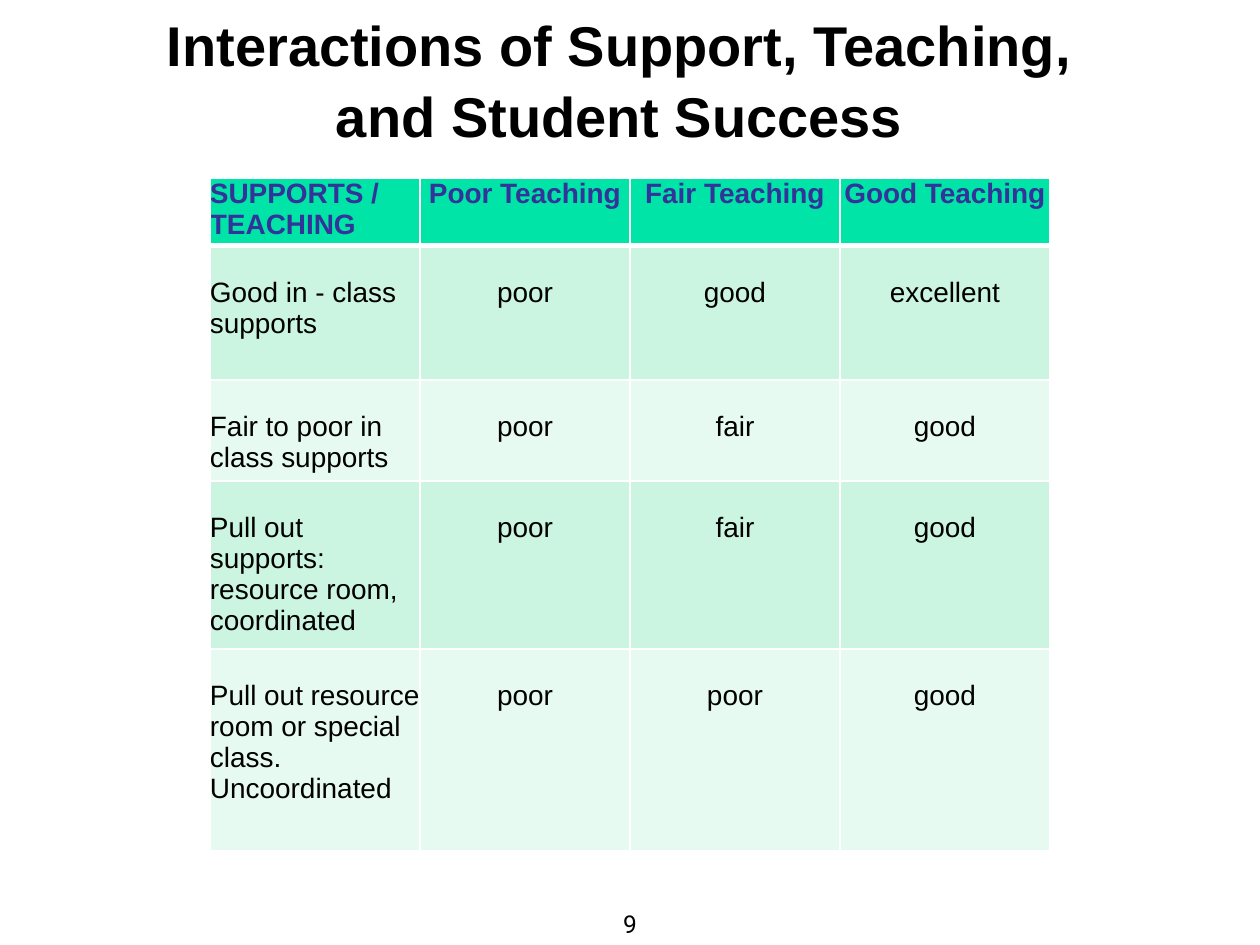
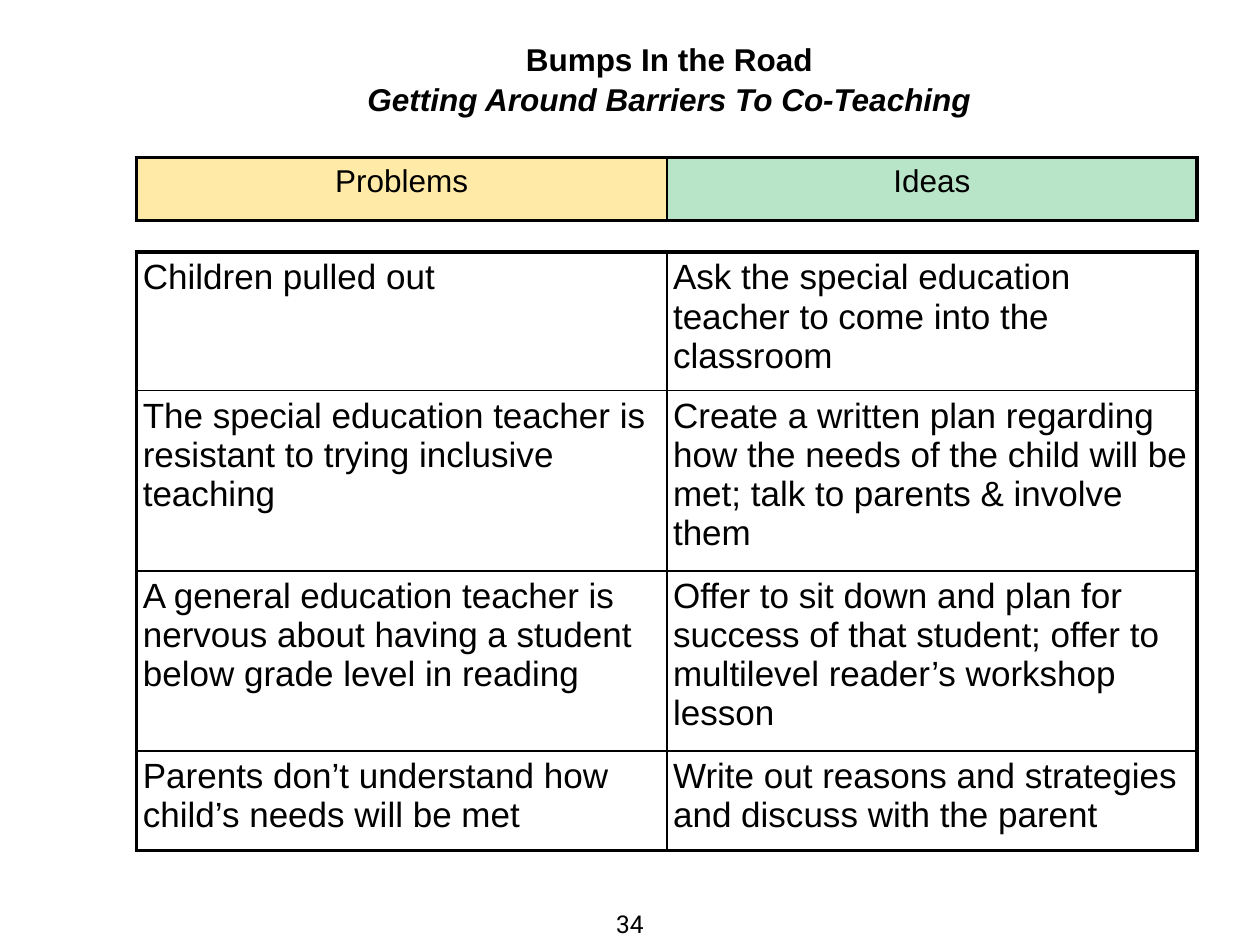
"""Builds two slides of tables on co-teaching supports and barriers."""
import dataclasses

import pptx
import pptx.dml.color
import pptx.enum.text
import pptx.oxml
import pptx.oxml.ns
import pptx.util

Align = pptx.enum.text.PP_ALIGN
Anchor = pptx.enum.text.MSO_ANCHOR
rgb = pptx.dml.color.RGBColor.from_string


@dataclasses.dataclass(frozen=True)
class Theme:
    black: str = "000000"
    white: str = "FFFFFF"
    indigo: str = "333399"
    header_green: str = "00E4A8"
    bands: tuple = ("CBF5E1", "E7FAF1")
    problem_yellow: str = "FFEBA7"
    idea_green: str = "B8E4C7"
    body_font: str = "Arial"
    number_font: str = "Roboto"
    headline: int = 32
    advice: int = 20
    subhead: int = 18
    rating: int = 16
    page_number: int = 14
    inset: float = 0.05
    title_spacing: float = 1.06
    thin: float = 1
    outline: float = 2.25
    header_rule: float = 3


class Deck:
    COLUMNS, ROWS = 120, 90

    def __init__(self, theme):
        self.theme = theme
        self.presentation = pptx.Presentation()
        self.presentation.slide_width = pptx.util.Inches(10)
        self.presentation.slide_height = pptx.util.Inches(7.5)
        self.slide = None

    def new_slide(self):
        self.slide = self.presentation.slides.add_slide(self.presentation.slide_layouts[5])

    def place(self, column, row, columns, rows):
        across = self.presentation.slide_width / self.COLUMNS
        down = self.presentation.slide_height / self.ROWS
        return [round(n) for n in (column * across, row * down, columns * across, rows * down)]

    def apply(self, target, values):
        for name, value in values.items():
            setattr(target, name, value)

    def margins(self, inset):
        sides = ("left", "top", "right", "bottom")
        return {f"margin_{side}": pptx.util.Inches(inset) for side in sides}

    def add_text(self, paragraph, text, size, color=None, align=Align.CENTER, **style):
        paragraph.alignment = align
        run = paragraph.add_run()
        run.text = text
        values = {"name": self.theme.body_font, "size": pptx.util.Pt(size),
                  "bold": False, "italic": False}
        self.apply(run.font, values | style)
        run.font.color.rgb = rgb(color or self.theme.black)

    def frame(self, shape, anchor, wrap):
        values = {"word_wrap": wrap, "vertical_anchor": anchor,
                  "auto_size": pptx.enum.text.MSO_AUTO_SIZE.NONE}
        self.apply(shape.text_frame, values | self.margins(self.theme.inset))
        return shape.text_frame

    def title(self, box, size, lines):
        heading = self.slide.shapes.title
        self.apply(heading, dict(zip(("left", "top", "width", "height"), self.place(*box))))
        frame = self.frame(heading, Anchor.TOP, True)
        for index, (text, italic) in enumerate(lines):
            paragraph = frame.add_paragraph() if index else frame.paragraphs[0]
            self.apply(paragraph, {"line_spacing": self.theme.title_spacing,
                                   "space_before": pptx.util.Pt(0)})
            self.add_text(paragraph, text, size, bold=True, italic=italic)

    def page_number(self, number):
        footer = self.slide.shapes.add_textbox(*self.place(58, 86, 4, 4))
        frame = self.frame(footer, Anchor.BOTTOM, False)
        self.add_text(frame.paragraphs[0], number, self.theme.page_number,
                      name=self.theme.number_font)

    def border(self, cell, color, widths):
        properties = cell._tc.get_or_add_tcPr()
        for index, (side, width) in enumerate(zip("LRTB", widths)):
            properties.insert(index, pptx.oxml.parse_xml(
                f'<a:ln{side} {pptx.oxml.ns.nsdecls("a")} w="{pptx.util.Pt(width)}">'
                f'<a:solidFill><a:srgbClr val="{color}"/></a:solidFill></a:ln{side}>'))

    def table(self, box, contents, heights, rules, rule_color, cell_style):
        left, top, width, height = self.place(*box)
        count = len(contents[0])
        grid = self.slide.shapes.add_table(len(contents), count, left, top, width, height).table
        self.apply(grid, {"first_row": False, "horz_banding": False})
        for column in grid.columns:
            column.width = round(width / count)
        for row, share in zip(grid.rows, heights):
            row.height = round(height * share / sum(heights))
        verticals, horizontals = rules
        for r, texts in enumerate(contents):
            for c, text in enumerate(texts):
                cell = grid.cell(r, c)
                fill, margins, style = cell_style(r, c)
                self.apply(cell, margins | {"vertical_anchor": Anchor.TOP})
                if fill:
                    cell.fill.solid()
                    cell.fill.fore_color.rgb = rgb(fill)
                else:
                    cell.fill.background()
                self.border(cell, rule_color, (*verticals[c:c + 2], *horizontals[r:r + 2]))
                self.add_text(cell.text_frame.paragraphs[0], text, **style)


def support_slide(deck):
    theme = deck.theme
    ratings = [
        ("SUPPORTS / TEACHING", "Poor Teaching", "Fair Teaching", "Good Teaching"),
        ("Good in - class supports", "poor", "good", "excellent"),
        ("Fair to poor in class supports", "poor", "fair", "good"),
        ("Pull out supports: resource room, coordinated", "poor", "fair", "good"),
        ("Pull out resource room or special class. Uncoordinated", "poor", "poor", "good"),
    ]

    def rating_style(row, column):
        style = {"size": theme.rating, "align": Align.CENTER if column else Align.LEFT}
        margins = deck.margins(0)
        if row == 0:
            return theme.header_green, margins, style | {"color": theme.indigo, "bold": True}
        margins["margin_top"] = pptx.util.Inches(0.25)
        return theme.bands[(row - 1) % 2], margins, style

    deck.new_slide()
    deck.page_number("9")
    deck.title((13.5, 0, 91, 19.5), theme.headline,
               [("Interactions of Support, Teaching, and Student Success", False)])
    rules = [theme.thin] * 5, [theme.thin, theme.header_rule] + [theme.thin] * 4
    deck.table((20, 17, 80, 64), ratings, (2, 4, 3, 5, 6), rules, theme.white, rating_style)


def barrier_slide(deck):
    theme = deck.theme
    advice = [
        ("Children pulled out",
         "Ask the special education teacher to come into the classroom"),
        ("The special education teacher is resistant to trying inclusive teaching",
         "Create a written plan regarding how the needs of the child will be met; "
         "talk to parents & involve them"),
        ("A general education teacher is nervous about having a student below grade "
         "level in reading",
         "Offer to sit down and plan for success of that student; offer to multilevel "
         "reader’s workshop lesson"),
        ("Parents don’t understand how child’s needs will be met",
         "Write out reasons and strategies and discuss with the parent"),
    ]
    margins = deck.margins(theme.inset)

    def advice_style(row, column):
        return None, margins, {"size": theme.advice, "align": Align.LEFT}

    def heading_style(row, column):
        fill = (theme.problem_yellow, theme.idea_green)[column]
        return fill, margins, {"size": theme.subhead}

    deck.new_slide()
    deck.page_number("34")
    deck.title((34, 3, 59.5, 8), theme.subhead,
               [("Bumps In the Road", False), ("Getting Around Barriers To Co-Teaching", True)])
    verticals = [theme.outline, theme.thin, theme.outline]
    horizontals = [theme.outline] + [theme.thin] * 3 + [theme.outline]
    deck.table((13, 24, 101, 57), advice, (1.1, 1.43, 1.43, 0.79),
               (verticals, horizontals), theme.black, advice_style)
    deck.table((13, 15, 101, 6), [("Problems", "Ideas")], (1,),
               (verticals, [theme.outline] * 2), theme.black, heading_style)


def main():
    deck = Deck(Theme())
    support_slide(deck)
    barrier_slide(deck)
    deck.presentation.save("out.pptx")


if __name__ == "__main__":
    main()
